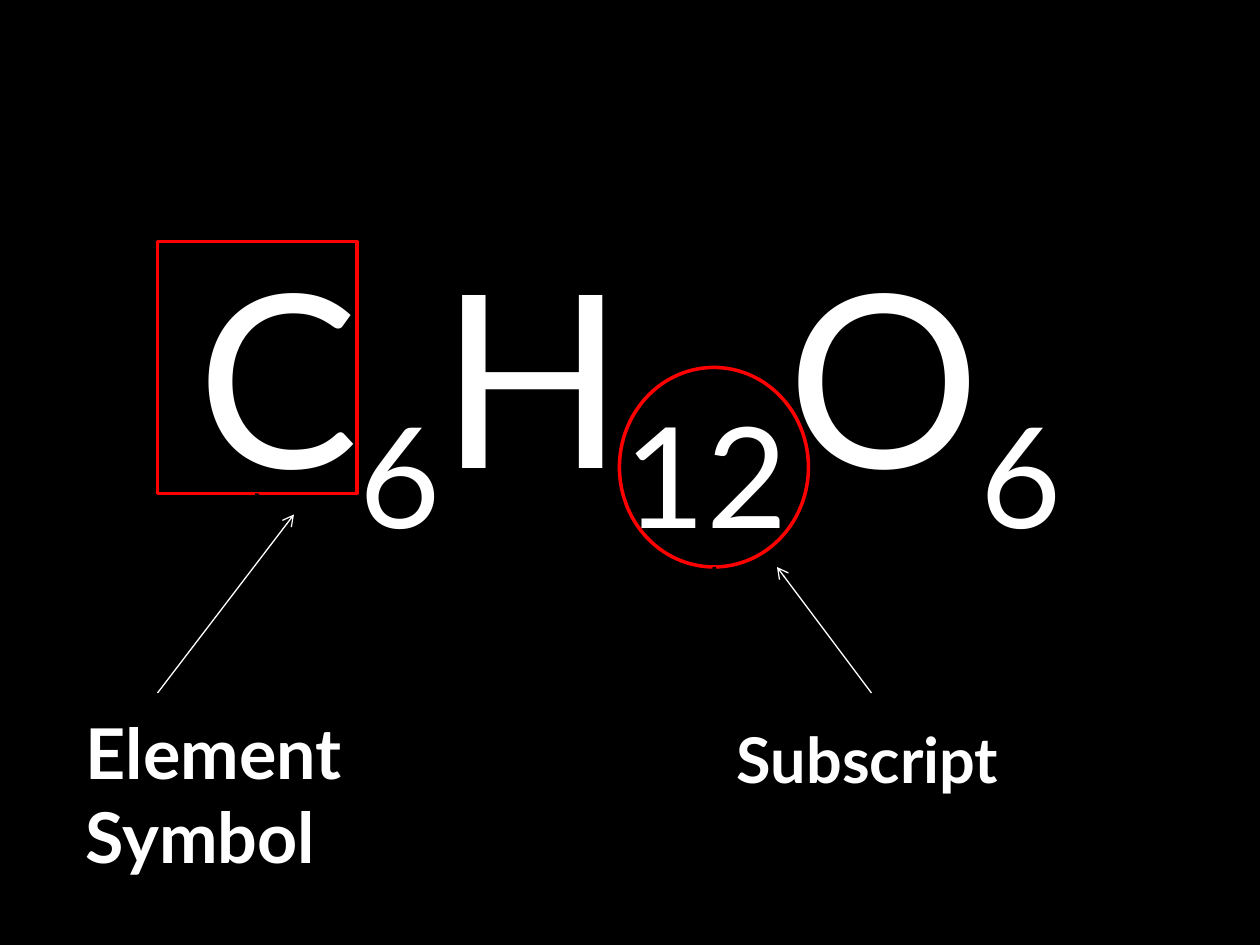
from lxml import etree
from pptx import Presentation
from pptx import util as u
from pptx.dml.color import RGBColor
from pptx.enum import shapes, text
from pptx.oxml import ns

BLACK = RGBColor(0x00, 0x00, 0x00)
WHITE = RGBColor(0xFF, 0xFF, 0xFF)
RED = RGBColor(0xFF, 0x00, 0x00)
FONT = "Lato"
GLUCOSE = [("C", "6"), ("H", "12"), ("O", "6")]


def points(*lengths):
    return [u.Pt(length) for length in lengths]


def add_text_box(page, place, size, bold=False):
    """Add an empty wrapped text box and return its styled paragraph."""
    box = page.shapes.add_textbox(*points(*place))
    box.text_frame.word_wrap = True
    para = box.text_frame.paragraphs[0]
    para.font.name = FONT
    para.font.size = u.Pt(size)
    para.font.bold = bold
    para.font.color.rgb = WHITE
    return para


def add_formula(page, place, size, formula):
    para = add_text_box(page, place, size)
    para.alignment = text.PP_ALIGN.CENTER
    for element, count in formula:
        para.add_run().text = element
        subscript = para.add_run()
        subscript.text = count
        subscript.font._element.set("baseline", "-25000")


def add_label(page, place, size, words):
    add_text_box(page, place, size, bold=True).add_run().text = words


def add_outline(page, kind, place):
    shape = page.shapes.add_shape(kind, *points(*place))
    shape.shadow.inherit = False
    shape.fill.background()
    shape.line.color.rgb = RED
    shape.line.width = u.Pt(2)


def add_arrow(page, start, end, color, width):
    arrow = page.shapes.add_connector(
        shapes.MSO_CONNECTOR.STRAIGHT, *points(*start, *end))
    arrow.line.color.rgb = color
    arrow.line.width = u.Pt(width)
    line = arrow.line._get_or_add_ln()
    etree.SubElement(line, ns.qn("a:tailEnd"), type="arrow")
    etree.SubElement(arrow._element.spPr, ns.qn("a:effectLst"))


def main():
    deck = Presentation()
    deck.slide_width, deck.slide_height = points(720, 540)
    page = deck.slides.add_slide(deck.slide_layouts[6])
    page.background.fill.solid()
    page.background.fill.fore_color.rgb = BLACK

    # Formula
    add_formula(page, (36, 126, 648, 356), 138, GLUCOSE)

    # Element symbol: frame, dark arrow, label
    add_outline(page, shapes.MSO_SHAPE.RECTANGLE, (90, 138, 114, 144))
    add_arrow(page, (147, 282), (144, 390), BLACK, 2.25)
    add_label(page, (42, 402, 240, 104), 40, "Element Symbol")

    # Subscript: ring, dark arrow, label
    add_outline(page, shapes.MSO_SHAPE.OVAL, (354, 210, 108, 114))
    add_arrow(page, (408, 324), (426, 402), BLACK, 2)
    add_label(page, (414, 408, 198, 51), 36, "Subscript")

    # White arrows from the labels
    add_arrow(page, (90, 396), (168, 294), WHITE, 0.75)
    add_arrow(page, (498, 396), (444, 324), WHITE, 0.75)

    deck.save("out.pptx")


if __name__ == "__main__":
    main()
